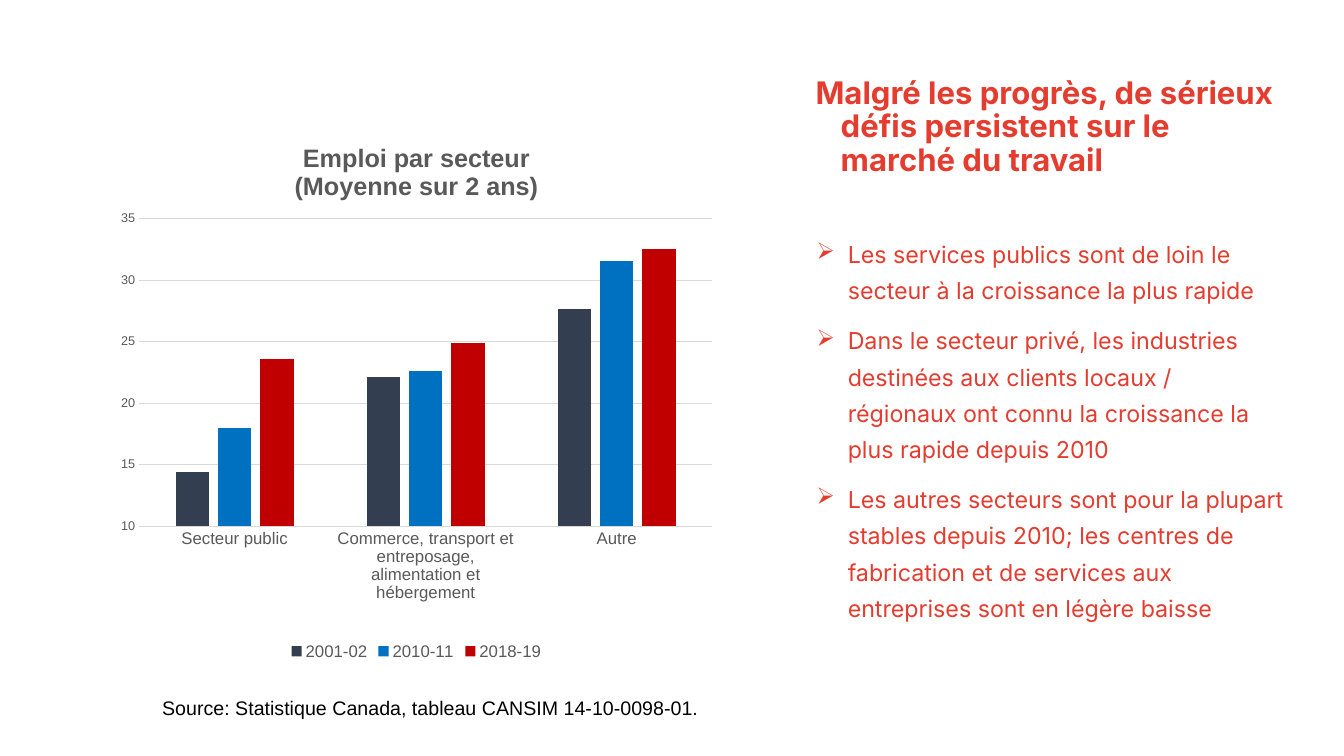
from lxml import etree
from pptx import Presentation
from pptx.chart.data import CategoryChartData
from pptx.dml.color import RGBColor
from pptx.enum.chart import XL_CHART_TYPE as Kind, XL_LEGEND_POSITION as Legend, XL_TICK_MARK as Tick
from pptx.oxml import parse_xml
from pptx.oxml.ns import nsdecls, qn
from pptx.util import Inches, Pt

RED, GREY, RULE = "E43D30", "595959", "D9D9D9"
TITLE = "Malgré les progrès, de sérieux défis persistent sur le marché du travail"
POINTS = [
    "Les services publics sont de loin le secteur à la croissance la plus rapide",
    "Dans le secteur privé, les industries destinées aux clients locaux / "
    "régionaux ont connu la croissance la plus rapide depuis 2010",
    "Les autres secteurs sont pour la plupart stables depuis 2010; les centres "
    "de fabrication et de services aux entreprises sont en légère baisse",
]
SECTORS = ["Secteur public",
           "Commerce, transport et entreposage, alimentation et hébergement",
           "Autre"]
YEARS = [
    ("2001-02", (14.4, 22.1, 27.7), "333F50"),
    ("2010-11", (18, 22.6, 31.6), "0070C0"),
    ("2018-19", (23.6, 24.9, 32.5), "C00000"),
]
SOURCE = "Source: Statistique Canada, tableau CANSIM 14-10-0098-01."


def rgb(code):
    return RGBColor.from_string(code)


def style(font, size, color, face="Arial", bold=False):
    font.size, font.name, font.bold = Pt(size), face, bold
    font.color.rgb = rgb(color)


def add_text(slide, box, lines, size, color, face="Arial", bold=False):
    """Add a wrapped text box with one paragraph per line and return its paragraphs."""
    frame = slide.shapes.add_textbox(*map(Inches, box)).text_frame
    frame.word_wrap = True
    frame.text = "\n".join(lines)
    for para in frame.paragraphs:
        style(para.runs[0].font, size, color, face, bold)
    return frame.paragraphs


def hang(para, left, first):
    """Set a hanging indent and return the paragraph properties."""
    props = para._p.get_or_add_pPr()
    props.set("marL", str(Inches(left)))
    props.set("indent", str(Inches(first)))
    return props


def add_title(slide, box):
    para = add_text(slide, box, [TITLE], 22.2, RED, "Inter", True)[0]
    hang(para, 0.5, -0.25)
    para.line_spacing = 0.9


def add_points(slide, box):
    for i, para in enumerate(add_text(slide, box, POINTS, 16.6, RED, "Inter")):
        props = hang(para, 0.56, -0.31)
        tint = etree.SubElement(props, qn("a:buClr"))
        etree.SubElement(tint, qn("a:srgbClr"), val=RED)
        etree.SubElement(props, qn("a:buChar"), char="➢")
        para.line_spacing = 1.3
        if i:
            para.space_before = Pt(10)


def place_plot(chart, x, y, w, h):
    """Fix the inner plot area, in fractions of the chart."""
    area = chart._chartSpace.chart.plotArea
    for old in area.findall(qn("c:layout")):
        area.remove(old)
    sides = "".join(f'<c:{tag} val="{val}"/>' for tag, val in
                    zip(("x", "y", "w", "h"), (x, y, w, h)))
    area.insert(0, parse_xml(
        f'<c:layout {nsdecls("c")}><c:manualLayout><c:layoutTarget val="inner"/>'
        f'<c:xMode val="edge"/><c:yMode val="edge"/>{sides}'
        '</c:manualLayout></c:layout>'))


def add_jobs(slide, box):
    data = CategoryChartData()
    data.categories = SECTORS
    for name, vals, _ in YEARS:
        data.add_series(name, vals)
    chart = slide.shapes.add_chart(Kind.COLUMN_CLUSTERED, *map(Inches, box), data).chart
    style(chart.font, 10, "000000")

    title = chart.chart_title
    title.text_frame.text = "Emploi par secteur\n(Moyenne sur 2 ans)"
    title.include_in_layout = False
    for para in title.text_frame.paragraphs:
        style(para.runs[0].font, 18, GREY, bold=True)

    plot = chart.plots[0]
    plot.gap_width, plot.overlap, plot.vary_by_categories = 219, -27, False
    for bar, (_, _, color) in zip(plot.series, YEARS):
        bar.format.fill.solid()
        bar.format.fill.fore_color.rgb = rgb(color)

    cat, val = chart.category_axis, chart.value_axis
    for axis, size in ((cat, 12), (val, 9)):
        axis.major_tick_mark = axis.minor_tick_mark = Tick.NONE
        style(axis.tick_labels.font, size, GREY)
    val.minimum_scale, val.maximum_scale, val.major_unit = 10, 35, 5
    val.format.line.fill.background()
    for line in (cat.format.line, val.major_gridlines.format.line):
        line.width = Pt(0.75)
        line.color.rgb = rgb(RULE)

    chart.has_legend = True
    chart.legend.position = Legend.BOTTOM
    chart.legend.include_in_layout = False
    style(chart.legend.font, 12, GREY)
    place_plot(chart, 0.055, 0.177, 0.92, 0.568)


def main():
    deck = Presentation()
    deck.slide_width, deck.slide_height = Inches(13.33), Inches(7.5)
    slide = deck.slides.add_slide(deck.slide_layouts[6])
    add_title(slide, (7.74, 0.72, 5.09, 1.3))
    add_points(slide, (7.75, 2.25, 5.09, 4.33))
    add_jobs(slide, (1.04, 1.22, 6.18, 5.37))
    add_text(slide, (1.51, 6.85, 9.05, 0.34), [SOURCE], 14, "000000")
    deck.save("out.pptx")


if __name__ == "__main__":
    main()
